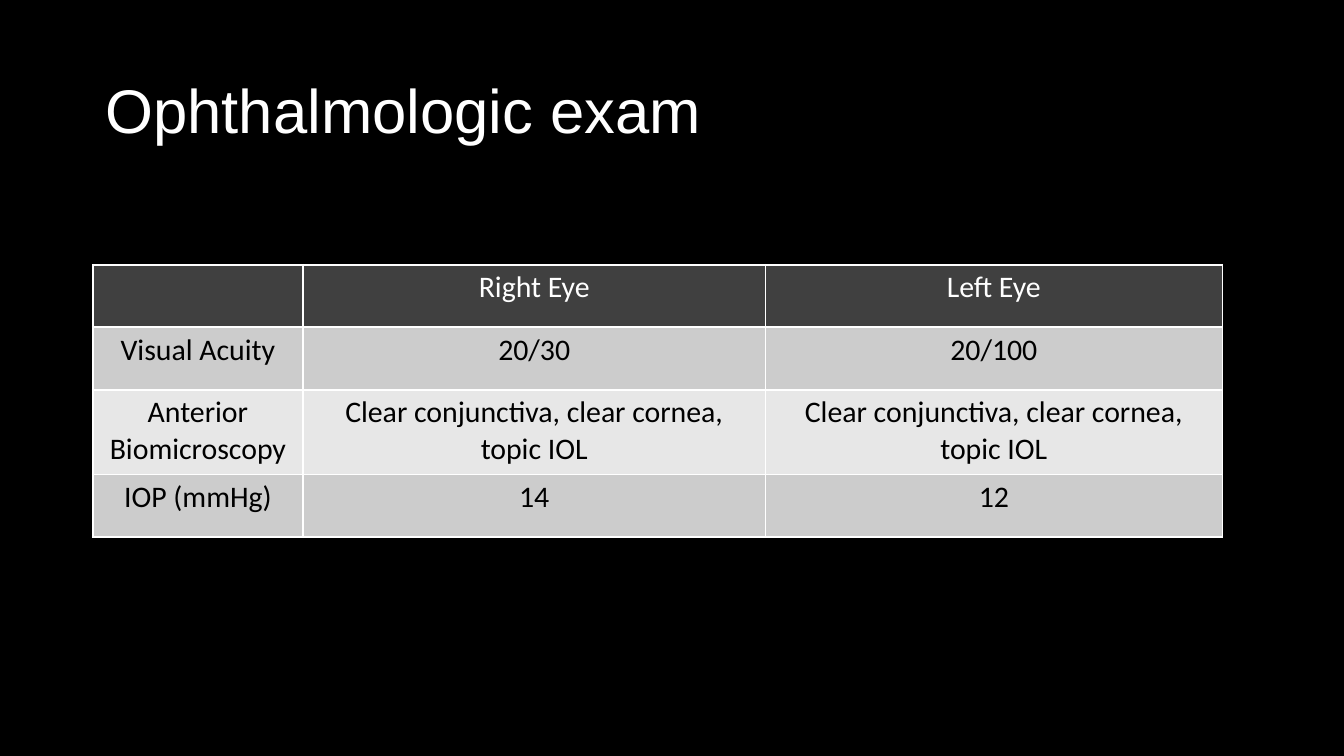
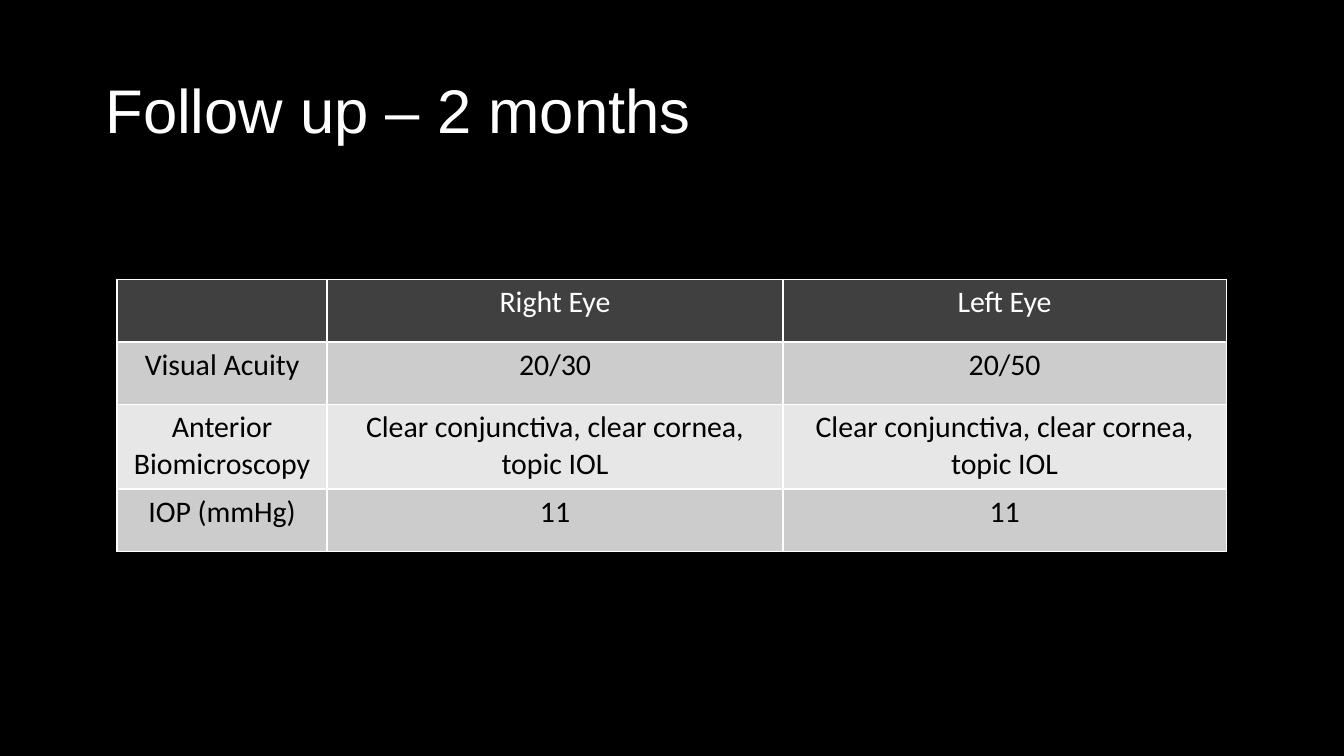
from lxml import etree
from pptx import Presentation
from pptx.dml.color import RGBColor
from pptx.enum.text import MSO_ANCHOR, PP_ALIGN
from pptx.oxml.ns import qn
from pptx.util import Pt

LEFT, CENTER = PP_ALIGN.LEFT, PP_ALIGN.CENTER
MIDDLE = MSO_ANCHOR.MIDDLE
PX = 4572
COLORS = {
    "background": "000000",
    "light": "FFFFFF",
    "dark": "000000",
    "header": "404040",
    "odd_row": "CCCCCC",
    "even_row": "E7E7E7",
}
ROW_HEIGHTS = [93, 93, 126, 93]
LABEL_WIDTH = 313
FINDINGS = "Clear conjunctiva, clear cornea, topic IOL"


def px(length):
    return length * PX


def rgb(name):
    return RGBColor.from_string(COLORS[name])


def write(frame, text, font="Calibri", size=16, color="dark", align=CENTER, spacing=1.0):
    paragraph = frame.paragraphs[0]
    paragraph.alignment = align
    paragraph.line_spacing = spacing
    run = paragraph.add_run()
    run.text = text
    run.font.name = font
    run.font.size = Pt(size)
    run.font.bold = False
    run.font.color.rgb = rgb(color)


def set_margins(holder, across, down):
    holder.margin_left = holder.margin_right = px(across)
    holder.margin_top = holder.margin_bottom = px(down)


class Deck:
    def __init__(self):
        self.presentation = Presentation()
        self.presentation.slide_width = px(2000)
        self.presentation.slide_height = px(1125)
        self.slide = None

    def add_slide(self, title):
        self.slide = self.presentation.slides.add_slide(self.presentation.slide_layouts[6])
        background = self.slide.background.fill
        background.solid()
        background.fore_color.rgb = rgb("background")
        self.add_title(title)

    def add_title(self, title):
        box = self.slide.shapes.add_textbox(px(138), px(60), px(1724), px(218))
        frame = box.text_frame
        frame.word_wrap = True
        frame.vertical_anchor = MIDDLE
        set_margins(frame, across=19, down=8)
        write(frame, title, font="Arial", size=33, color="light", align=LEFT, spacing=0.9)

    def add_exam_table(self, left, top, eye_widths, acuity, pressure):
        rows = [
            ("", "Right Eye", "Left Eye"),
            ("Visual Acuity", *acuity),
            ("Anterior Biomicroscopy", FINDINGS, FINDINGS),
            ("IOP (mmHg)", *pressure),
        ]
        widths = [LABEL_WIDTH, *eye_widths]
        table = self.slide.shapes.add_table(
            len(rows), len(widths), px(left), px(top), px(sum(widths)), px(sum(ROW_HEIGHTS))
        ).table
        table.horz_banding = False
        for column, width in zip(table.columns, widths):
            column.width = px(width)
        for index, (row, height, texts) in enumerate(zip(table.rows, ROW_HEIGHTS, rows)):
            row.height = px(height)
            fill = "header" if index == 0 else "odd_row" if index % 2 else "even_row"
            color = "dark" if index else "light"
            for cell, text in zip(row.cells, texts):
                self.style_cell(cell, fill)
                if text:
                    write(cell.text_frame, text, color=color)

    def style_cell(self, cell, fill):
        set_margins(cell, across=15, down=7)
        properties = cell._tc.get_or_add_tcPr()
        for side in ("a:lnL", "a:lnR", "a:lnT", "a:lnB"):
            line = etree.SubElement(properties, qn(side), w=str(Pt(1)))
            solid = etree.SubElement(line, qn("a:solidFill"))
            etree.SubElement(solid, qn("a:srgbClr"), val=COLORS["light"])
        cell.fill.solid()
        cell.fill.fore_color.rgb = rgb(fill)


def main():
    deck = Deck()
    deck.add_slide("Ophthalmologic exam")
    deck.add_exam_table(138, 394, (688, 680), acuity=("20/30", "20/100"), pressure=("14", "12"))
    deck.add_slide("Follow up – 2 months")
    deck.add_exam_table(174, 416, (678, 660), acuity=("20/30", "20/50"), pressure=("11", "11"))
    deck.presentation.save("out.pptx")


if __name__ == "__main__":
    main()
